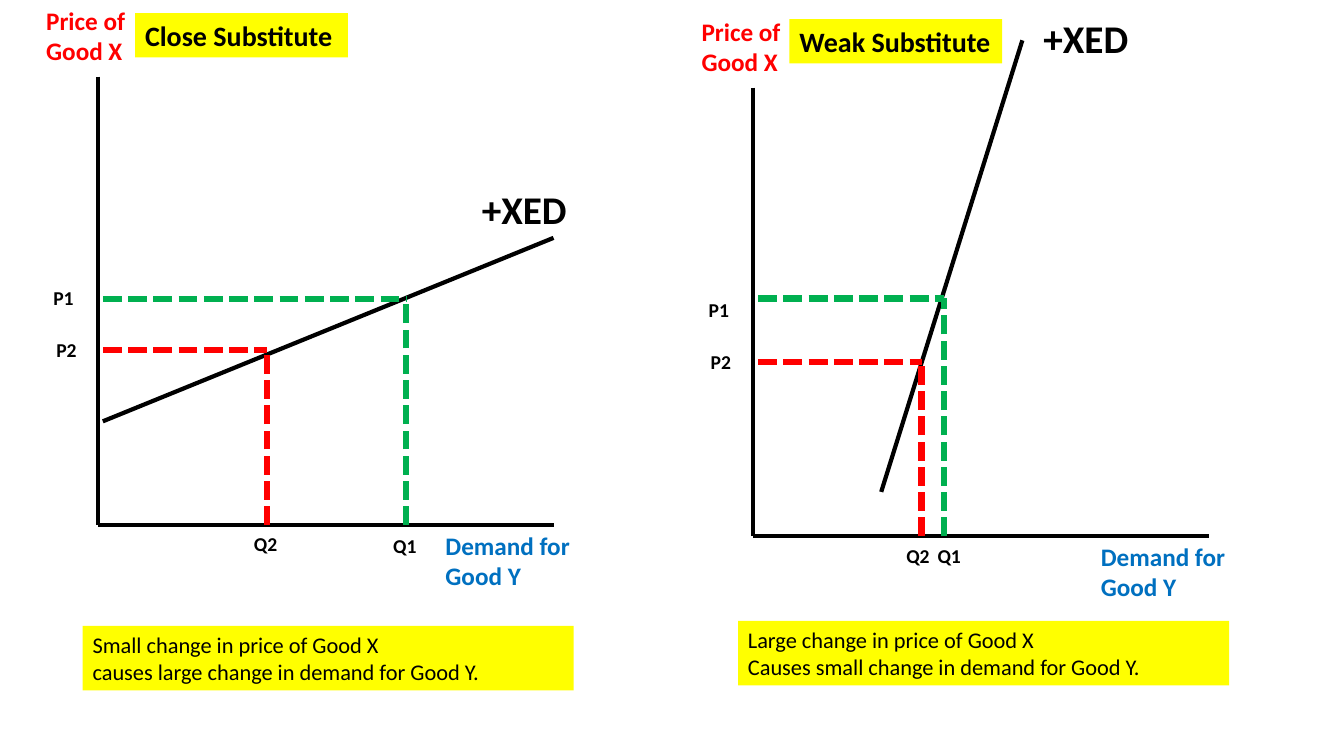
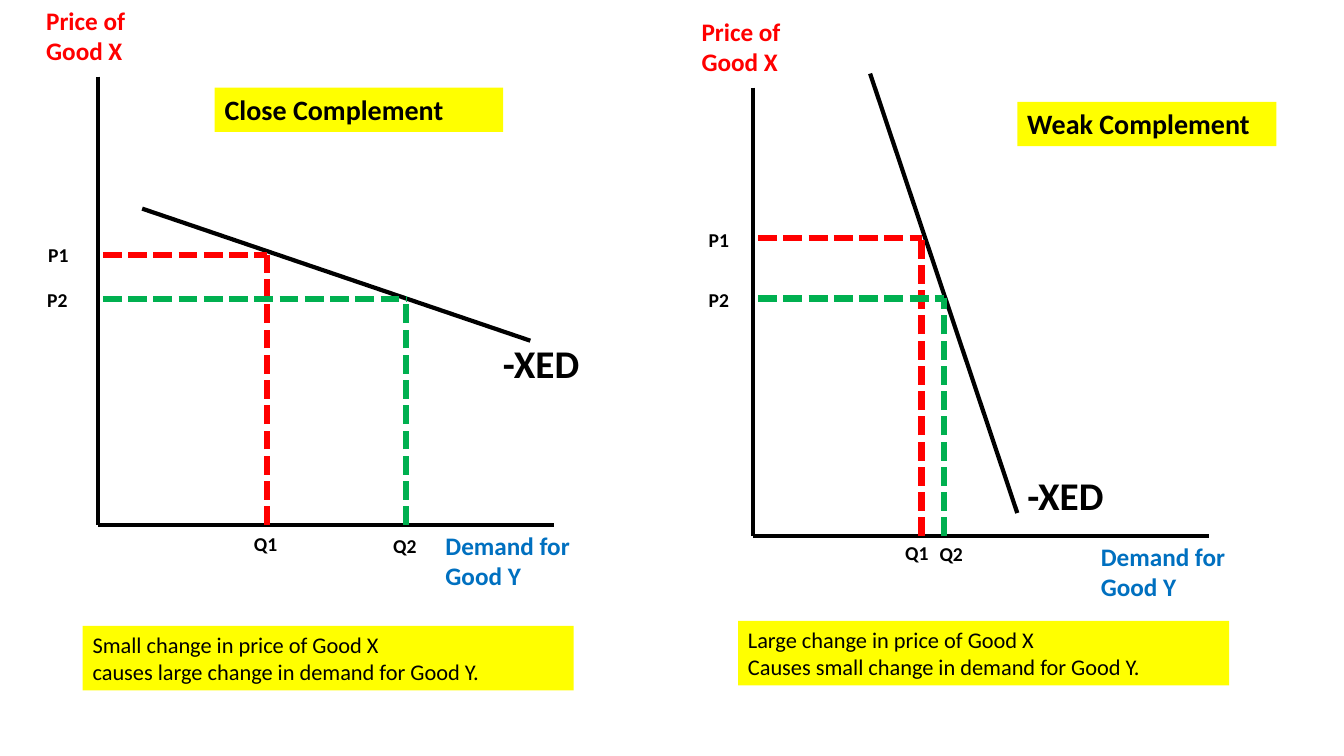
from dataclasses import dataclass

from lxml.etree import SubElement
from pptx import Presentation
from pptx.dml.color import RGBColor
from pptx.enum.dml import MSO_LINE
from pptx.enum.shapes import MSO_CONNECTOR
from pptx.enum.text import MSO_AUTO_SIZE
from pptx.oxml.ns import qn
from pptx.util import Inches, Pt

FONT = "Calibri"
COLORS = {
    "black": "000000",
    "red": "FF0000",
    "green": "00B050",
    "blue": "0070C0",
    "yellow": "FFFF00",
}
AXIS_HEIGHT, AXIS_WIDTH = 4.45, 4.52
GUIDE_GAP = 0.05


@dataclass
class Guide:
    """A price and the quantity demanded at it, with the label corners."""
    color: str
    price_name: str
    quantity_name: str
    quantity_x: float
    price_y: float
    price_label: tuple
    quantity_label: tuple


@dataclass
class Graph:
    origin: tuple
    title: str
    title_at: tuple  # left, top, width
    curve: tuple  # start point, end point
    curve_name: str
    curve_label: tuple
    guides: tuple
    note: str
    note_top: float


def color_of(name):
    return RGBColor.from_string(COLORS[name])


# Element kinds
def add_text(page, text, left, top, width, height, size=18, color="black",
             bold=True, fill=None):
    box = page.shapes.add_textbox(
        Inches(left), Inches(top), Inches(width), Inches(height))
    if fill:
        box.fill.solid()
        box.fill.fore_color.rgb = color_of(fill)
    frame = box.text_frame
    frame.word_wrap = True
    frame.auto_size = MSO_AUTO_SIZE.SHAPE_TO_FIT_TEXT
    para = frame.paragraphs[0]
    for index, line in enumerate(text.split("\n")):
        if index:
            para.add_line_break()
        span = para.add_run()
        span.text = line
        span.font.name = FONT
        span.font.size = Pt(size)
        span.font.bold = bold
        span.font.color.rgb = color_of(color)


def add_line(page, start, end, width, color="black", dash=None):
    line = page.shapes.add_connector(
        MSO_CONNECTOR.STRAIGHT, *map(Inches, (*start, *end)))
    line.line.width = Pt(width)
    line.line.color.rgb = color_of(color)
    if dash:
        line.line.dash_style = dash
    SubElement(line._element.spPr, qn("a:effectLst"))


def add_axes(page, origin):
    x, y = origin
    add_line(page, (x, y - AXIS_HEIGHT), origin, 2.5)
    add_line(page, (x + AXIS_WIDTH, y), origin, 2.5)
    add_text(page, "Price of\nGood X", x - 0.61, y - 5.21, 1.57, 0.71,
             color="red")
    add_text(page, "Demand for\nGood Y", x + 3.35, y, 1.57, 0.71,
             color="blue")


def add_guide(page, origin, guide):
    x, y = origin
    corner = (guide.quantity_x, guide.price_y)
    for start in ((guide.quantity_x, y), (x + GUIDE_GAP, guide.price_y)):
        add_line(page, start, corner, 4.5, guide.color, MSO_LINE.SQUARE_DOT)
    add_text(page, guide.price_name, *guide.price_label, 0.52, 0.34, size=14)
    add_text(page, guide.quantity_name, *guide.quantity_label, 1.05, 0.34,
             size=14)


def add_graph(page, graph):
    add_axes(page, graph.origin)
    add_line(page, *graph.curve, 3)
    add_text(page, graph.curve_name, *graph.curve_label, 1.21, 0.57, size=28)
    for guide in graph.guides:
        add_guide(page, graph.origin, guide)
    add_text(page, graph.note, graph.origin[0] - 0.15, graph.note_top,
             4.87, 0.64, size=16, bold=False, fill="yellow")
    add_text(page, graph.title, *graph.title_at, 0.44, size=20, fill="yellow")


# What the graphs on each side share
CLOSE = {
    "origin": (0.97, 5.21),
    "note": "Small change in price of Good X\n"
            "causes large change in demand for Good Y.",
    "note_top": 6.21,
}
WEAK = {
    "origin": (7.47, 5.32),
    "note": "Large change in price of Good X\n"
            "Causes small change in demand for Good Y.",
    "note_top": 6.16,
}

SUBSTITUTES = (
    Graph(
        title="Close Substitute", title_at=(1.34, 0.13, 2.11),
        curve=((1.02, 4.18), (5.49, 2.36)),
        curve_name="+XED", curve_label=(4.68, 1.79),
        guides=(
            Guide("red", "P2", "Q2", 2.65, 3.47, (0.46, 3.3), (2.42, 5.23)),
            Guide("green", "P1", "Q1", 4.03, 2.97, (0.43, 2.79), (3.8, 5.25)),
        ),
        **CLOSE),
    Graph(
        title="Weak Substitute", title_at=(7.83, 0.19, 2.11),
        curve=((8.74, 4.88), (10.14, 0.4)),
        curve_name="+XED", curve_label=(10.25, 0.09),
        guides=(
            Guide("red", "P2", "Q2", 9.14, 3.59, (6.95, 3.42), (8.89, 5.35)),
            Guide("green", "P1", "Q1", 9.36, 2.96, (6.93, 2.91), (9.2, 5.35)),
        ),
        **WEAK),
)
COMPLEMENTS = (
    Graph(
        title="Close Complement", title_at=(2.13, 0.87, 2.86),
        curve=((1.41, 2.07), (5.26, 3.38)),
        curve_name="-XED", curve_label=(4.89, 3.32),
        guides=(
            Guide("red", "P1", "Q1", 2.65, 2.53, (0.38, 2.36), (2.42, 5.23)),
            Guide("green", "P2", "Q2", 4.03, 2.97, (0.37, 2.81), (3.8, 5.25)),
        ),
        **CLOSE),
    Graph(
        title="Weak Complement", title_at=(10.09, 1.01, 2.57),
        curve=((10.09, 5.09), (8.63, 0.73)),
        curve_name="-XED", curve_label=(10.09, 4.63),
        guides=(
            Guide("red", "P1", "Q1", 9.14, 2.36, (6.93, 2.21), (8.88, 5.32)),
            Guide("green", "P2", "Q2", 9.36, 2.96, (6.93, 2.81), (9.22, 5.33)),
        ),
        **WEAK),
)


def main():
    deck = Presentation()
    deck.slide_width, deck.slide_height = Inches(13.33), Inches(7.5)
    for graphs in (SUBSTITUTES, COMPLEMENTS):
        page = deck.slides.add_slide(deck.slide_layouts[6])
        for graph in graphs:
            add_graph(page, graph)
    deck.save("out.pptx")


if __name__ == "__main__":
    main()
